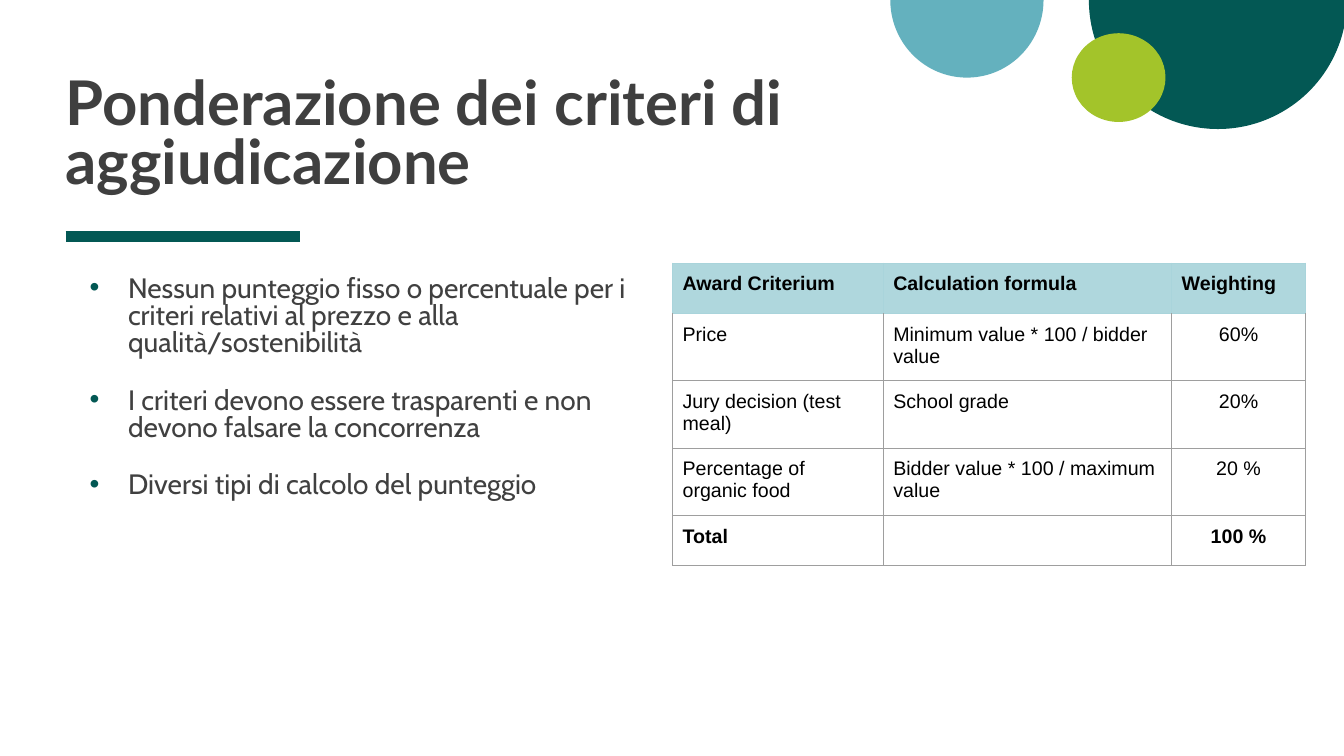
from lxml.etree import SubElement
from pptx import Presentation
from pptx.dml.color import RGBColor
from pptx.enum.shapes import MSO_CONNECTOR as CONNECTOR, MSO_SHAPE as SHAPE
from pptx.enum.text import MSO_ANCHOR as ANCHOR, PP_ALIGN as ALIGN
from pptx.oxml.ns import qn
from pptx.util import Inches, Pt

DARK_GREEN, BLUE, LIME = "035854", "64B1BE", "A3C42A"
HEADER_FILL, HEADER_BORDER, BORDER = "AFD7DD", "A9D4DB", "9E9E9E"

TITLE = "Ponderazione dei criteri di aggiudicazione"
POINTS = [
    "Nessun punteggio fisso o percentuale per i criteri relativi al prezzo e alla qualità/sostenibilità",
    "I criteri devono essere trasparenti e non devono falsare la concorrenza",
    "Diversi tipi di calcolo del punteggio",
]
CRITERIA = [
    ("Award Criterium", "Calculation formula", "Weighting"),
    ("Price", "Minimum value * 100 / bidder value", "60%"),
    ("Jury decision (test meal)", "School grade", "20%"),
    ("Percentage of organic food", "Bidder value * 100 / maximum value", "20 %"),
    ("Total", "", "100 %"),
]
COLUMN_WIDTHS = (2.09, 2.86, 1.33)
ROW_HEIGHT = 0.5


def color(hex_value):
    return RGBColor.from_string(hex_value)


def format_runs(paragraph, name, size, hex_value, bold=False):
    for run in paragraph.runs:
        run.font.name = name
        run.font.size = Pt(size)
        run.font.bold = bold
        run.font.color.rgb = color(hex_value)


def add_text_frame(slide, left, top, width, height, inset_top=0):
    text_frame = slide.shapes.add_textbox(
        Inches(left), Inches(top), Inches(width), Inches(height)).text_frame
    text_frame.word_wrap = True
    text_frame.margin_left = text_frame.margin_right = text_frame.margin_bottom = 0
    text_frame.margin_top = Inches(inset_top)
    return text_frame


def add_disc(slide, kind, left, top, width, height, fill):
    disc = slide.shapes.add_shape(
        kind, Inches(left), Inches(top), Inches(width), Inches(height))
    disc.shadow.inherit = False
    disc.fill.solid()
    disc.fill.fore_color.rgb = color(fill)
    disc.line.fill.background()
    return disc


def add_half_disc(slide, left, top, width, height, fill):
    disc = add_disc(slide, SHAPE.PIE, left, top, width, height, fill)
    disc.adjustments[0] = 0
    disc.adjustments[1] = 108


def add_decoration(slide, left):
    add_half_disc(slide, left + 1.97, -1.28, 2.56, 2.56, DARK_GREEN)
    add_half_disc(slide, left, -0.77, 1.52, 1.54, BLUE)
    add_disc(slide, SHAPE.OVAL, left + 1.8, 0.33, 0.93, 0.88, LIME)


def add_title(slide, left, top, width, height):
    text_frame = add_text_frame(slide, left, top, width, height)
    text_frame.vertical_anchor = ANCHOR.BOTTOM
    text_frame.text = TITLE
    paragraph = text_frame.paragraphs[0]
    paragraph.line_spacing = 0.8
    format_runs(paragraph, "Lato", 44, "3F3F3F", True)

    rule_top = Inches(top + height + 0.4)
    rule = slide.shapes.add_connector(
        CONNECTOR.STRAIGHT, Inches(left), rule_top, Inches(left + 2.33), rule_top)
    rule.line.color.rgb = color(DARK_GREEN)
    rule.line.width = Pt(8)
    SubElement(rule._element.spPr, qn("a:effectLst"))


def add_bullet(paragraph):
    properties = paragraph._p.get_or_add_pPr()
    properties.set("marL", str(Inches(0.62)))
    properties.set("indent", str(Inches(-0.38)))
    bullet_color = SubElement(properties, qn("a:buClr"))
    SubElement(bullet_color, qn("a:srgbClr"), val=DARK_GREEN)
    SubElement(properties, qn("a:buFont"), typeface="Arial")
    SubElement(properties, qn("a:buChar"), char="•")


def add_points(slide, left, top, width, height):
    text_frame = add_text_frame(slide, left, top, width, height, 0.25)
    for index, point in enumerate(POINTS):
        paragraph = text_frame.add_paragraph() if index else text_frame.paragraphs[0]
        paragraph.text = point
        add_bullet(paragraph)
        paragraph.line_spacing = 0.8
        paragraph.space_before = Pt(22 if index else 0)
        format_runs(paragraph, "Cabin", 20, "404040")


def set_borders(cell, row):
    properties = cell._tc.get_or_add_tcPr()
    for side in ("L", "R", "T", "B"):
        in_header = row == 0 or (row == 1 and side == "T")
        line = SubElement(properties, qn(f"a:ln{side}"), w=str(Pt(0.75)))
        fill = SubElement(line, qn("a:solidFill"))
        SubElement(fill, qn("a:srgbClr"), val=HEADER_BORDER if in_header else BORDER)


def format_cell(cell, row, column):
    cell.margin_left = cell.margin_right = Inches(0.1)
    cell.margin_top = cell.margin_bottom = Inches(0.1)
    set_borders(cell, row)
    if row == 0:
        cell.fill.solid()
        cell.fill.fore_color.rgb = color(HEADER_FILL)
    else:
        cell.fill.background()
    paragraph = cell.text_frame.paragraphs[0]
    if row and column == 2:
        paragraph.alignment = ALIGN.CENTER
    format_runs(paragraph, "Arial", 14, "000000", row in (0, len(CRITERIA) - 1))


def add_criteria_table(slide, left, top):
    table = slide.shapes.add_table(
        len(CRITERIA), len(COLUMN_WIDTHS), Inches(left), Inches(top),
        Inches(sum(COLUMN_WIDTHS)), Inches(ROW_HEIGHT * len(CRITERIA))).table
    table.horz_banding = False
    for column, width in enumerate(COLUMN_WIDTHS):
        table.columns[column].width = Inches(width)
    for row, texts in enumerate(CRITERIA):
        table.rows[row].height = Inches(ROW_HEIGHT)
        for column, text in enumerate(texts):
            cell = table.cell(row, column)
            cell.text = text
            format_cell(cell, row, column)


def main():
    presentation = Presentation()
    presentation.slide_width = Inches(13.33)
    presentation.slide_height = Inches(7.5)
    slide = presentation.slides.add_slide(presentation.slide_layouts[6])
    add_decoration(slide, 8.83)
    add_title(slide, 0.65, 0.21, 7.42, 1.74)
    add_points(slide, 0.65, 2.5, 5.73, 4.69)
    add_criteria_table(slide, 6.67, 2.61)
    presentation.save("out.pptx")


if __name__ == "__main__":
    main()
